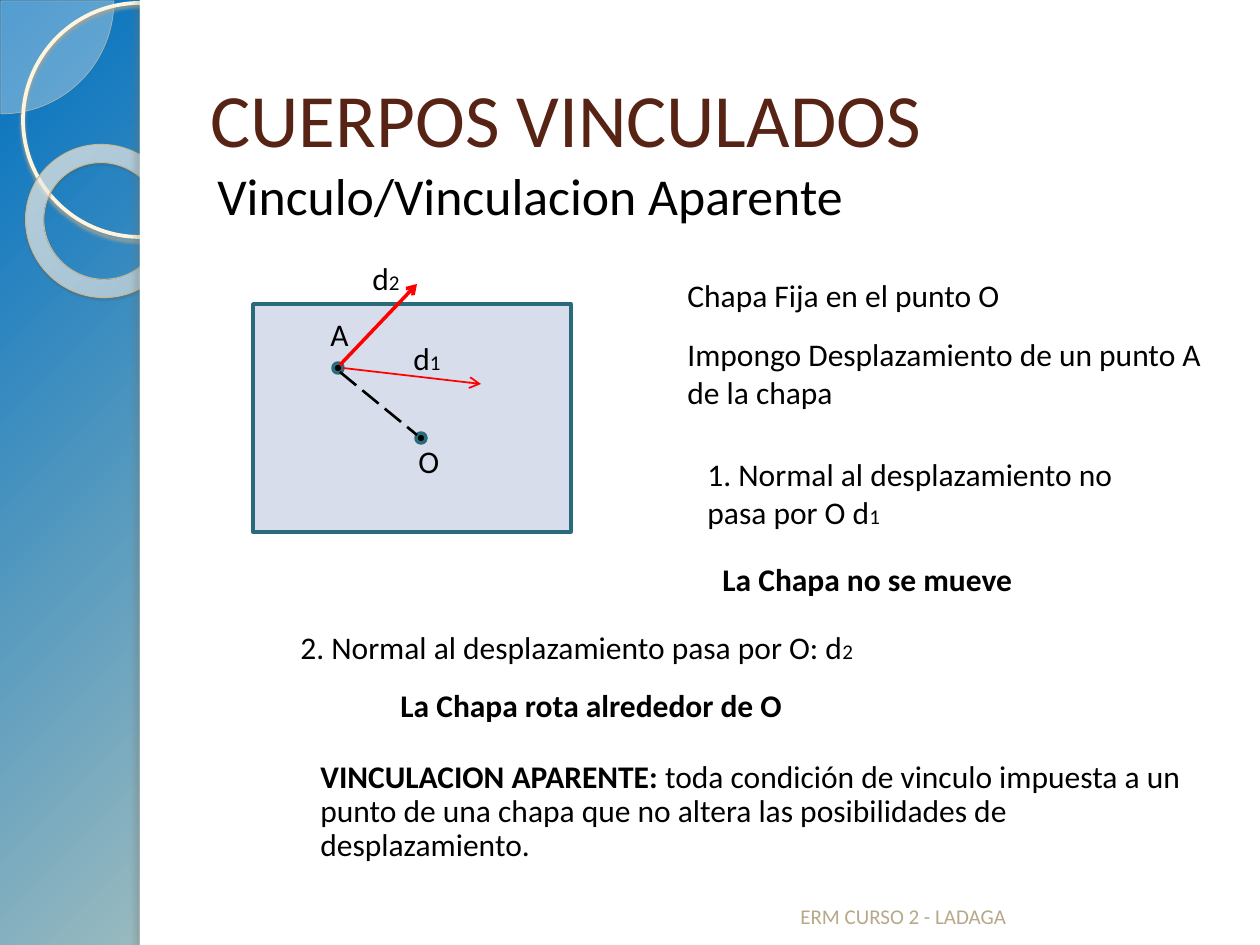
"""Build the slide on linked bodies, with its plate diagram and side band."""
from dataclasses import dataclass, field
from typing import NamedTuple, Optional

from lxml.etree import SubElement as Sub, QName
from pptx import Presentation
from pptx.dml.color import RGBColor as RGB
from pptx.enum.dml import MSO_LINE as Dash
from pptx.enum.shapes import MSO_CONNECTOR as Link, MSO_SHAPE as Kind
from pptx.enum.text import MSO_ANCHOR as Anchor, MSO_AUTO_SIZE as Auto, PP_ALIGN as Align
from pptx.oxml import parse_xml
from pptx.oxml.ns import nsdecls, qn
from pptx.util import Emu, Pt

SCALE = 914400 / 126


def px(num: float) -> Emu:
    return Emu(round(num * SCALE))


@dataclass(frozen=True)
class Theme:
    face: str = "Calibri"
    ink: str = "000000"
    title: str = "572314"
    foot: str = "B6A98A"
    plate: str = "D7DDEB"
    edge: str = "296B7C"
    force: str = "FF0000"
    white: str = "FFFFFF"
    sizes: dict = field(default_factory=lambda: {
        "title": 43, "head": 29.6, "main": 18, "bold": 18, "sub": 12, "foot": 12})

    def style(self, name: str) -> dict:
        return {"name": self.face, "size": Pt(self.sizes[name]), "bold": name == "bold"}

    def tint(self, name: str) -> RGB:
        return RGB.from_string({"title": self.title, "foot": self.foot}.get(name, self.ink))


THEME = Theme()


class Shade(NamedTuple):
    color: str
    alpha: int
    blur: float
    dist: float
    angle: int


class Blend(NamedTuple):
    stops: tuple
    focus: tuple


class Form(NamedTuple):
    kind: Kind
    box: tuple
    fill: object = None
    line: Optional[str] = None
    width: float = 1
    shade: Optional[Shade] = None
    alpha: int = 100
    turn: float = 0
    adjust: tuple = ()


class Note(NamedTuple):
    box: tuple
    runs: tuple
    indent: int = 0
    lead: float = 1.0
    anchor: Anchor = Anchor.TOP


class Ray(NamedTuple):
    start: tuple
    end: tuple
    color: str
    width: float
    dash: Optional[Dash] = None
    arrow: bool = False


def blend_xml(blend: Blend):
    stops = "".join(
        f'<a:gs pos="{pos * 1000}"><a:srgbClr val="{color}">'
        f'<a:alpha val="{alpha * 1000}"/></a:srgbClr></a:gs>'
        for pos, color, alpha in blend.stops)
    sides = " ".join(f'{side}="{num * 1000}"' for side, num in zip("ltrb", blend.focus))
    return parse_xml(
        f'<a:gradFill {nsdecls("a")} rotWithShape="1"><a:gsLst>{stops}</a:gsLst>'
        f'<a:path path="circle"><a:fillToRect {sides}/></a:path></a:gradFill>')


def paint(fill, owner, value, alpha: int = 100) -> None:
    if value is None:
        fill.background()
        return
    fill.solid()
    fill.fore_color.rgb = RGB.from_string(THEME.white if isinstance(value, Blend) else value)
    solid = owner.find(qn("a:solidFill"))
    if isinstance(value, Blend):
        owner.replace(solid, blend_xml(value))
    elif alpha < 100:
        Sub(solid[0], qn("a:alpha"), val=str(alpha * 1000))


def cast(shape, shade: Shade) -> None:
    effect = shape.element.spPr.find(qn("a:effectLst"))
    outer = Sub(effect, qn("a:outerShdw"), blurRad=str(Pt(shade.blur)),
                dist=str(Pt(shade.dist)), dir=str(shade.angle * 60000), rotWithShape="0")
    color = Sub(outer, qn("a:srgbClr"), val=shade.color)
    Sub(color, qn("a:alpha"), val=str(shade.alpha * 1000))


def draw_form(shapes, form: Form) -> None:
    shape = shapes.add_shape(form.kind, *map(px, form.box))
    shape.rotation = form.turn
    for spot, num in enumerate(form.adjust):
        shape.adjustments[spot] = num
    paint(shape.fill, shape.element.spPr, form.fill, form.alpha)
    if form.line:
        shape.line.color.rgb = RGB.from_string(form.line)
        shape.line.width = Pt(form.width)
    else:
        shape.line.fill.background()
    shape.shadow.inherit = False
    if form.shade:
        cast(shape, form.shade)


def write(shape, note: Note) -> None:
    frame = shape.text_frame
    for name, value in {"word_wrap": True, "auto_size": Auto.NONE,
                        "vertical_anchor": note.anchor}.items():
        setattr(frame, name, value)
    para = frame.paragraphs[0]
    for name, value in {"alignment": Align.LEFT, "line_spacing": note.lead,
                        "space_before": Pt(0)}.items():
        setattr(para, name, value)
    props = para._p.get_or_add_pPr()
    props.set("marL", str(px(note.indent)))
    props.set("indent", "0")
    for text, style in note.runs:
        run = para.add_run()
        run.text = text
        for name, value in THEME.style(style).items():
            setattr(run.font, name, value)
        run.font.color.rgb = THEME.tint(style)


def draw_note(shapes, note: Note) -> None:
    write(shapes.add_textbox(*map(px, note.box)), note)


def draw_title(shapes, note: Note) -> None:
    title = shapes.title
    for name, num in zip(("left", "top", "width", "height"), note.box):
        setattr(title, name, px(num))
    write(title, note)
    shapes.element.append(title.element)


def draw_ray(shapes, ray: Ray) -> None:
    link = shapes.add_connector(Link.STRAIGHT, *map(px, ray.start + ray.end))
    link.line.color.rgb = RGB.from_string(ray.color)
    link.line.width = Pt(ray.width)
    if ray.dash:
        link.line.dash_style = ray.dash
    if ray.arrow:
        Sub(link.element.spPr.find(qn("a:ln")), qn("a:tailEnd"), type="arrow")
    Sub(link.element.spPr, qn("a:effectLst"))


BACK = Blend(((0, "0070C0", 100), (82, "FFEBBE", 100), (100, "C9B484", 100)),
             (-24, -20, 124, 120))
GLASS = Blend(((0, "FFFCF6", 70), (70, "FFFEFB", 55), (100, "F0D28E", 60)),
              (-408, -50, 508, 150))
BAND = (
    Form(Kind.PIE, (-112, -112, 226, 226), "FEFAF4", "D3C39F", 0.25, alpha=33, adjust=(0, 54)),
    Form(Kind.OVAL, (23, 3, 234, 234), None, "FFF5DE", 2.15, Shade("B0A68F", 85, 2, 2, 90)),
    Form(Kind.DONUT, (25, 145, 155, 152), GLASS, "C7B893", 0.58,
         Shade("5A5444", 35, 1, 1.2, 75), turn=38.6, adjust=(0.12,)),
    Form(Kind.RECTANGLE, (140, 0, 1120, 945), THEME.white),
    Form(Kind.RECTANGLE, (140, 0, 10, 945), THEME.white, shade=Shade("736F63", 25, 3, 3, 180)),
)
TITLE = Note((198, 38, 1033, 158), (("CUERPOS VINCULADOS", "title"),), anchor=Anchor.MIDDLE)
NOTES = (
    Note((194, 165, 1033, 69), (("Vinculo/Vinculacion Aparente", "head"),), 11, 0.9),
    Note((620, 270, 625, 69), (("Chapa Fija en el punto O", "main"),), 55),
    Note((620, 329, 625, 89),
         (("Impongo Desplazamiento de un punto A de la chapa", "main"),), 55),
    Note((640, 449, 525, 103),
         (("1. Normal al desplazamiento no pasa por O d", "main"), ("1", "sub")), 55),
    Note((655, 554, 525, 74), (("La Chapa no se mueve", "bold"),), 55),
    Note((233, 622, 794, 68),
         (("2. Normal al desplazamiento pasa por O: d", "main"), ("2", "sub")), 55),
    Note((333, 680, 525, 74), (("La Chapa rota alrededor de O", "bold"),), 55),
    Note((253, 755, 963, 123),
         (("VINCULACION APARENTE: ", "bold"),
          ("toda condición de vinculo impuesta a un punto de una chapa que no altera "
           "las posibilidades de desplazamiento.", "main")), 55, 0.9),
    Note((788, 869, 399, 66), (("ERM CURSO 2 - LADAGA", "foot"),), anchor=Anchor.BOTTOM),
)
PLATE = (
    Form(Kind.RECTANGLE, (253, 304, 318, 228), THEME.plate, THEME.edge, 2),
    *(Form(Kind.OVAL, (*spot, 10, 10), THEME.ink, THEME.edge, 2)
      for spot in ((416, 433), (333, 363))),
)
RAYS = (
    Ray((340, 372), (417, 435), THEME.ink, 1.5, Dash.LONG_DASH),
    Ray((343, 368), (481, 384), THEME.force, 1, arrow=True),
    Ray((340, 365), (417, 284), THEME.force, 2, arrow=True),
)
LABELS = (
    Note((406, 436, 49, 50), (("O", "main"),)),
    Note((318, 309, 49, 50), (("A", "main"),)),
    Note((401, 333, 91, 50), (("d", "main"), ("1", "sub"))),
    Note((360, 253, 91, 50), (("d", "main"), ("2", "sub"))),
)


def main() -> None:
    deck = Presentation()
    deck.slide_width, deck.slide_height = px(1260), px(945)
    slide = deck.slides.add_slide(deck.slide_layouts[5])
    fill = slide.background.fill
    fill.solid()
    paint(fill, slide.element.xpath(".//p:bgPr")[0], BACK)
    shapes = slide.shapes
    for form in BAND:
        draw_form(shapes, form)
    draw_title(shapes, TITLE)
    for group, draw in ((NOTES, draw_note), (PLATE, draw_form),
                        (RAYS, draw_ray), (LABELS, draw_note)):
        for item in group:
            draw(shapes, item)
    deck.save("out.pptx")


if __name__ == "__main__":
    main()
